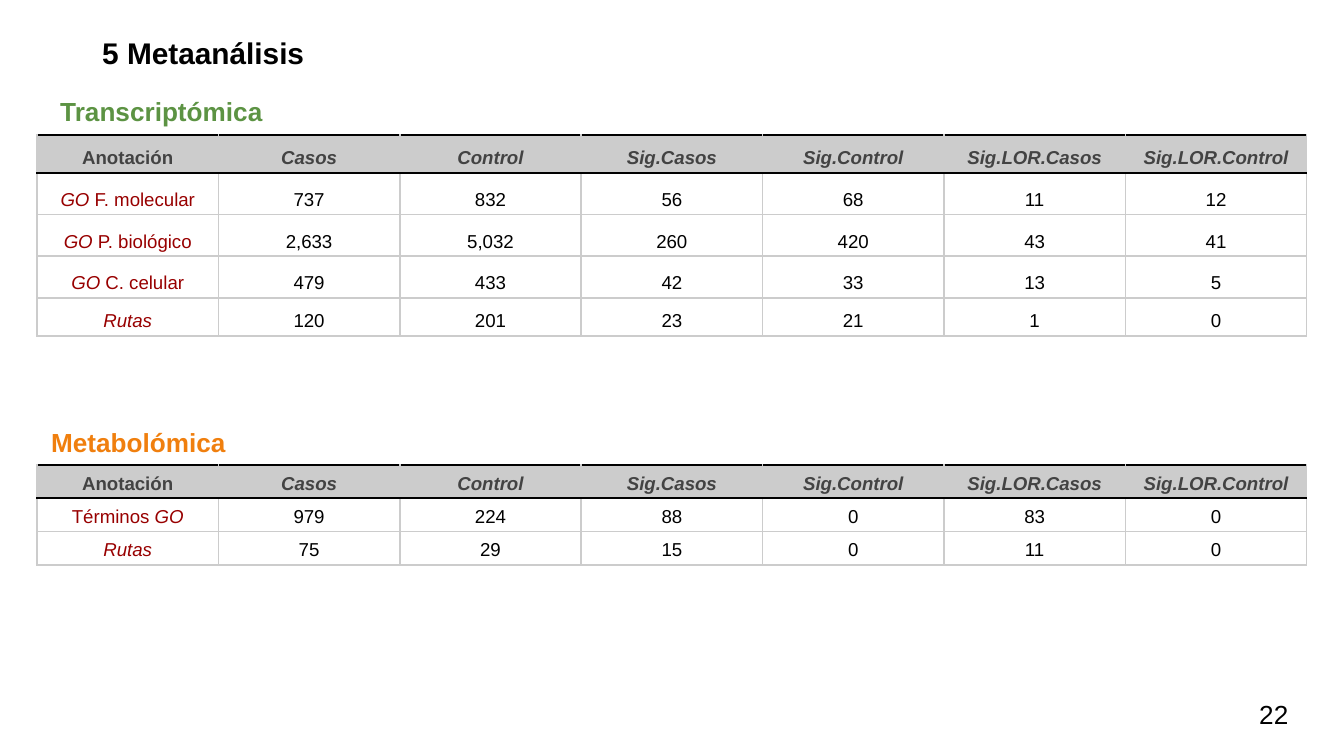
import lxml.etree
import pptx
import pptx.dml.color
import pptx.enum.text
import pptx.oxml.ns
import pptx.util

EMU_PER_PX = 914400 / 134.4
FONT = "Arial"
RGBColor = pptx.dml.color.RGBColor
BLACK = RGBColor(0x00, 0x00, 0x00)
HEADER_GREY = RGBColor(0x43, 0x43, 0x43)
GRID_GREY = RGBColor(0xCC, 0xCC, 0xCC)
LABEL_RED = RGBColor(0x98, 0x00, 0x00)
GREEN = RGBColor(0x5C, 0x93, 0x43)
ORANGE = RGBColor(0xF0, 0x7F, 0x0E)
ALIGN = pptx.enum.text.PP_ALIGN
ANCHOR = pptx.enum.text.MSO_ANCHOR
AUTO_SIZE = pptx.enum.text.MSO_AUTO_SIZE

TABLE_LEFT, TABLE_WIDTH = 37, 1270
CELL_MARGIN = 4
NORMAL_SPACING, WIDE_SPACING = 1.15, 1.5
HEADINGS = ["Anotación", "Casos", "Control", "Sig.Casos", "Sig.Control",
            "Sig.LOR.Casos", "Sig.LOR.Control"]
GO, PATHWAYS = ("GO", True), ("Rutas", True)

TRANSCRIPTOMICS = [
    ([GO, (" F. molecular", False)], ["737", "832", "56", "68", "11", "12"], WIDE_SPACING),
    ([GO, (" P. biológico", False)], ["2,633", "5,032", "260", "420", "43", "41"], WIDE_SPACING),
    ([GO, (" C. celular", False)], ["479", "433", "42", "33", "13", "5"], WIDE_SPACING),
    ([PATHWAYS], ["120", "201", "23", "21", "1", "0"], NORMAL_SPACING),
]
METABOLOMICS = [
    ([("Términos ", False), GO], ["979", "224", "88", "0", "83", "0"], NORMAL_SPACING),
    ([PATHWAYS], ["75", "29", "15", "0", "11", "0"], NORMAL_SPACING),
]


def px(length):
    return pptx.util.Emu(round(length * EMU_PER_PX))


def style_run(run, size, color, bold=False, italic=False):
    run.font.name = FONT
    run.font.size = pptx.util.Pt(size)
    run.font.color.rgb = color
    run.font.bold = bold
    run.font.italic = italic


def add_text(slide, box, text, size, color, bold=True, wrap=True, align=ALIGN.LEFT):
    frame = slide.shapes.add_textbox(*map(px, box)).text_frame
    frame.text = text
    frame.word_wrap = wrap
    frame.auto_size = AUTO_SIZE.SHAPE_TO_FIT_TEXT
    paragraph = frame.paragraphs[0]
    paragraph.alignment = align
    style_run(paragraph.runs[0], size, color, bold)
    return frame


def add_title(slide, text):
    paragraph = add_text(slide, (37, 28, 864, 50), text, 16, BLACK,
                         align=ALIGN.JUSTIFY).paragraphs[0]
    paragraph.space_before = pptx.util.Pt(10)
    properties = paragraph._p.get_or_add_pPr()
    properties.set("marL", str(px(52)))
    properties.set("indent", "0")


def add_page_number(slide, text):
    frame = add_text(slide, (1246, 685, 81, 58), text, 14, BLACK, bold=False)
    frame.auto_size = AUTO_SIZE.NONE
    frame.vertical_anchor = ANCHOR.MIDDLE
    frame.margin_top = frame.margin_bottom = px(13)


def set_borders(cell, top, bottom):
    properties = cell._tc.get_or_add_tcPr()
    qn = pptx.oxml.ns.qn
    for side, color in (("L", GRID_GREY), ("R", GRID_GREY), ("T", top), ("B", bottom)):
        line = lxml.etree.SubElement(properties, qn("a:ln" + side), w=str(pptx.util.Pt(1)))
        fill = lxml.etree.SubElement(line, qn("a:solidFill"))
        lxml.etree.SubElement(fill, qn("a:srgbClr"), val=str(color))


def fill_cell(cell, parts, color, bold=False, spacing=NORMAL_SPACING):
    cell.vertical_anchor = ANCHOR.BOTTOM
    cell.margin_left = cell.margin_right = px(CELL_MARGIN)
    cell.margin_top = cell.margin_bottom = px(CELL_MARGIN)
    paragraph = cell.text_frame.paragraphs[0]
    paragraph.alignment = ALIGN.CENTER
    paragraph.line_spacing = spacing
    for text, italic in parts:
        run = paragraph.add_run()
        run.text = text
        style_run(run, 10, color, bold, italic)


def add_results_table(slide, top, height, results):
    table = slide.shapes.add_table(len(results) + 1, len(HEADINGS), px(TABLE_LEFT), px(top),
                                   px(TABLE_WIDTH), px(height)).table
    table.first_row = False
    table.horz_banding = False
    for column, heading in enumerate(HEADINGS):
        cell = table.cell(0, column)
        fill_cell(cell, [(heading, column > 0)], HEADER_GREY, bold=True)
        set_borders(cell, BLACK, BLACK)
        cell.fill.solid()
        cell.fill.fore_color.rgb = GRID_GREY
    for row, (label, values, spacing) in enumerate(results, 1):
        fill_cell(table.cell(row, 0), label, LABEL_RED)
        for column, value in enumerate(values, 1):
            fill_cell(table.cell(row, column), [(value, False)], BLACK, spacing=spacing)
        for cell in table.rows[row].cells:
            set_borders(cell, BLACK if row == 1 else GRID_GREY, GRID_GREY)
            cell.fill.background()


def main():
    presentation = pptx.Presentation()
    presentation.slide_width = px(1344)
    presentation.slide_height = px(756)
    slide = presentation.slides.add_slide(presentation.slide_layouts[6])
    add_results_table(slide, 465, 100, METABOLOMICS)
    add_title(slide, "5 Metaanálisis")
    add_results_table(slide, 135, 190, TRANSCRIPTOMICS)
    add_text(slide, (47, 89, 232, 46), "Transcriptómica", 14, GREEN, wrap=False)
    add_text(slide, (37, 420, 203, 46), "Metabolómica", 14, ORANGE, wrap=False,
             align=ALIGN.CENTER)
    add_page_number(slide, "22")
    presentation.save("out.pptx")


if __name__ == "__main__":
    main()
